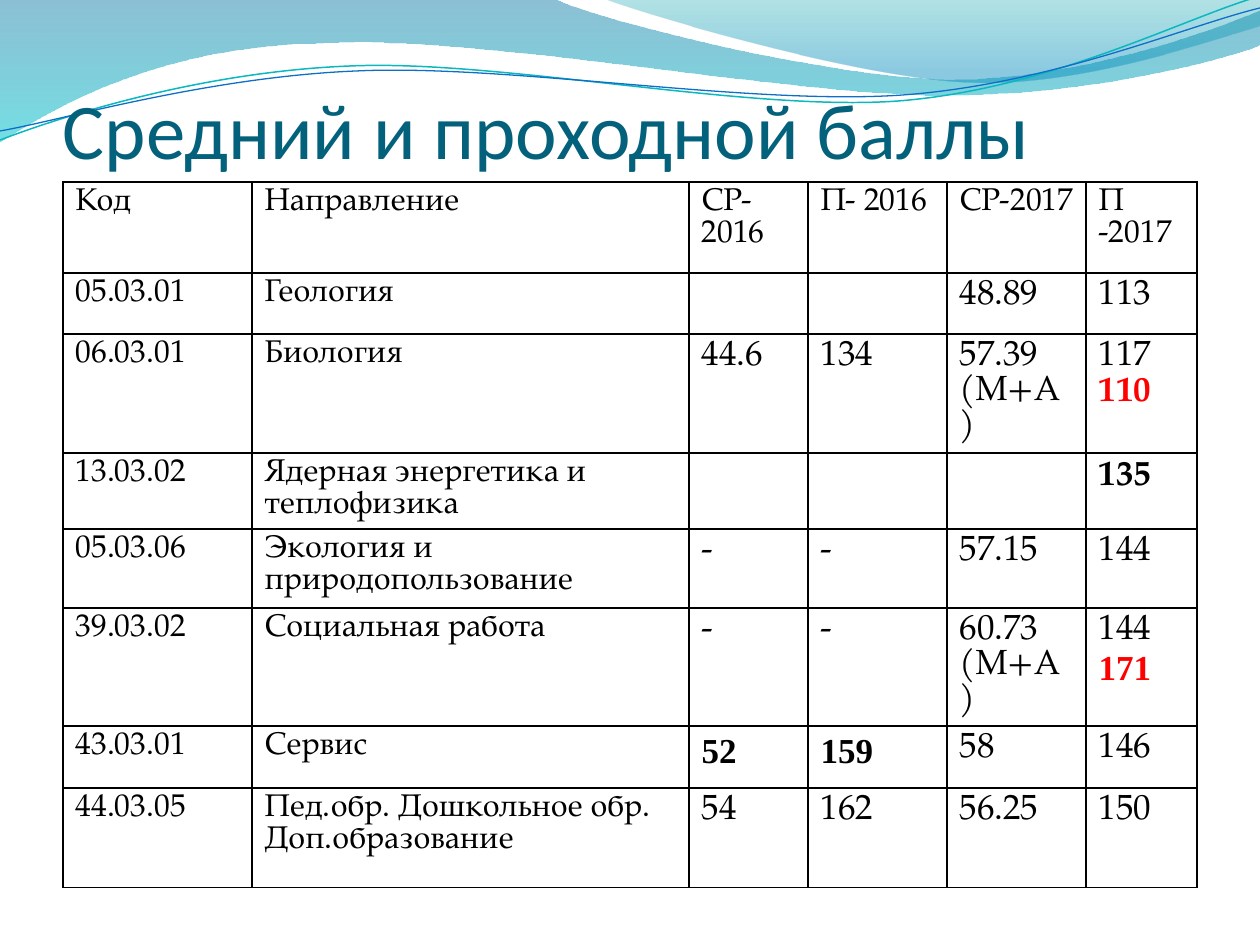
from dataclasses import dataclass

from lxml.etree import SubElement
from pptx import Presentation
from pptx.dml.color import RGBColor
from pptx.enum.text import MSO_ANCHOR
from pptx.oxml.ns import qn
from pptx.util import Emu, Pt

EMU_PER_PX = 914400 / 126


def px(n):
    return Emu(round(n * EMU_PER_PX))


@dataclass(frozen=True)
class Theme:
    title_font: str = "Calibri"
    body_font: str = "TeX Gyre Pagella"
    accent_font: str = "Times New Roman"
    title_size: int = 45
    label_size: int = 18
    score_size: int = 20
    title: str = "04617B"
    text: str = "000000"
    alert: str = "FF0000"
    teal_line: str = "0AB8BF"
    blue_line: str = "0F6FC6"
    # gradient stops: position, colour, opacity in percent
    left_wave: tuple = ((0, "0074A1", 45), (1, "00C6CF", 55))
    right_wave: tuple = ((0, "00A1A9", 30), (0.8, "008BBF", 45))


THEME = Theme()

# Each outline is a list of steps: 2 numbers draw a line, 6 a Bézier curve.
LEFT_WAVE = [(0, 0), (554, -1), (600, 21, 837, 79, 955, 79),
             (1075, 79, 1207, 33, 1260, 11), (1261, 45),
             (1239, 55, 1096, 96, 940, 95), (784, 95, 481, 35, 324, 43),
             (163, 45, 58, 105, -1, 142), (0, 0)]
RIGHT_WAVE = [(604, -1), (641, 14, 859, 78, 969, 82),
              (1079, 87, 1211, 40, 1260, 26), (1260, 0), (604, -1)]
TEAL_CURVE = [(0, 140), (60, 117, 199, 72, 349, 66),
              (498, 59, 747, 112, 898, 101), (1050, 89, 1182, 19, 1257, -3)]
BLUE_CURVE = [(0, 131), (59, 121, 207, 77, 357, 71),
              (508, 64, 752, 106, 903, 95), (1053, 84, 1186, 26, 1260, 8)]

COLUMNS = [189, 437, 119, 139, 139, 111]
ROWS = [91, 61, 119, 76, 79, 118, 62, 100]
SCORES = [
    ["Код", "Направление", "СР- 2016", "П- 2016", "СР-2017", "П -2017"],
    ["05.03.01", "Геология", "", "", "48.89", "113"],
    ["06.03.01", "Биология", "44.6", "134", "57.39\n(М+А)", "117\n110"],
    ["13.03.02", "Ядерная энергетика и теплофизика", "", "", "", "135"],
    ["05.03.06", "Экология и природопользование", "-", "-", "57.15", "144"],
    ["39.03.02", "Социальная работа", "-", "-", "60.73\n(М+А)", "144\n171"],
    ["43.03.01", "Сервис", "52", "159", "58", "146"],
    ["44.03.05", "Пед.обр. Дошкольное обр. Доп.образование",
     "54", "162", "56.25", "150"],
]
# Bold scores: font and colour
EMPHASIS = {
    "110": (THEME.body_font, THEME.alert),
    "135": (THEME.body_font, THEME.text),
    "171": (THEME.accent_font, THEME.alert),
    "52": (THEME.accent_font, THEME.text),
    "159": (THEME.accent_font, THEME.text),
}


class SlideBuilder:
    def __init__(self, slide, theme):
        self.s = slide
        self.theme = theme

    def style(self, p, font, size, color, bold=False):
        p.font.name = font
        p.font.size = Pt(size)
        p.font.bold = bold
        p.font.color.rgb = RGBColor.from_string(color)

    def outline(self, steps, closed):
        """Draw through all points, then join each control triple into a curve."""
        points = [(px(step[i]), px(step[i + 1]))
                  for step in steps for i in range(0, len(step), 2)]
        builder = self.s.shapes.build_freeform(*points[0], scale=1.0)
        builder.add_line_segments(points[1:], close=closed)
        sp = builder.convert_to_shape()
        sp.shadow.inherit = False
        segments = iter(list(sp._element.spPr.iter(qn("a:lnTo"))))
        for step in steps[1:]:
            first = next(segments)
            if len(step) == 6:
                bezier = first.makeelement(qn("a:cubicBezTo"))
                first.addprevious(bezier)
                for segment in (first, next(segments), next(segments)):
                    bezier.append(segment[0])
                    segment.getparent().remove(segment)
        return sp

    def wave(self, steps, stops):
        sp = self.outline(steps, closed=True)
        sp.line.fill.background()
        sp.fill.gradient()
        sp.fill.gradient_angle = 270
        for stop, (position, color, _) in zip(sp.fill.gradient_stops, stops):
            stop.position = position
            stop.color.rgb = RGBColor.from_string(color)
        colors = sp._element.spPr.iter(qn("a:srgbClr"))
        for clr, (_, _, opacity) in zip(colors, stops):
            SubElement(clr, qn("a:alpha"), val=str(opacity * 1000))

    def curve(self, steps, color, width):
        sp = self.outline(steps, closed=False)
        sp.fill.background()
        sp.line.color.rgb = RGBColor.from_string(color)
        sp.line.width = Pt(width)

    def title(self, text, x, y, w, h):
        tf = self.s.shapes.add_textbox(px(x), px(y), px(w), px(h)).text_frame
        tf.word_wrap = True
        tf.vertical_anchor = MSO_ANCHOR.BOTTOM
        tf.margin_left = tf.margin_right = tf.margin_bottom = 0
        p = tf.paragraphs[0]
        p.text = text
        self.style(p, self.theme.title_font, self.theme.title_size, self.theme.title)

    def table(self, rows, x, y, widths, heights):
        frame = self.s.shapes.add_table(len(rows), len(widths), px(x), px(y),
                                        px(sum(widths)), px(sum(heights)))
        table = frame.table
        table.first_row = table.horz_banding = False
        for column, width in zip(table.columns, widths):
            column.width = px(width)
        for row, height in zip(table.rows, heights):
            row.height = px(height)
        for i, row in enumerate(rows):
            for j, text in enumerate(row):
                is_label = i == 0 or j < 2
                size = self.theme.label_size if is_label else self.theme.score_size
                self.cell(table.cell(i, j), text, size)

    def cell(self, cell, text, size):
        self.borders(cell)
        cell.fill.background()
        cell.text = text
        for p in cell.text_frame.paragraphs:
            plain = (self.theme.body_font, self.theme.text)
            font, color = EMPHASIS.get(p.text, plain)
            self.style(p, font, size, color, bold=p.text in EMPHASIS)
            if font == self.theme.body_font:
                p.line_spacing = Pt(size)

    def borders(self, cell):
        tc_pr = cell._tc.get_or_add_tcPr()
        for side in ("a:lnL", "a:lnR", "a:lnT", "a:lnB"):
            ln = SubElement(tc_pr, qn(side), w=str(Pt(1)))
            fill = SubElement(ln, qn("a:solidFill"))
            SubElement(fill, qn("a:srgbClr"), val=self.theme.text)


def main():
    prs = Presentation()
    prs.slide_width, prs.slide_height = px(1260), px(945)
    b = SlideBuilder(prs.slides.add_slide(prs.slide_layouts[6]), THEME)
    b.wave(LEFT_WAVE, THEME.left_wave)
    b.wave(RIGHT_WAVE, THEME.right_wave)
    b.curve(TEAL_CURVE, THEME.teal_line, 0.85)
    b.curve(BLUE_CURVE, THEME.blue_line, 0.75)
    b.title("Средний и проходной баллы", 63, 76, 1134, 99)
    b.table(SCORES, 63, 182, COLUMNS, ROWS)
    prs.save("out.pptx")


if __name__ == "__main__":
    main()
